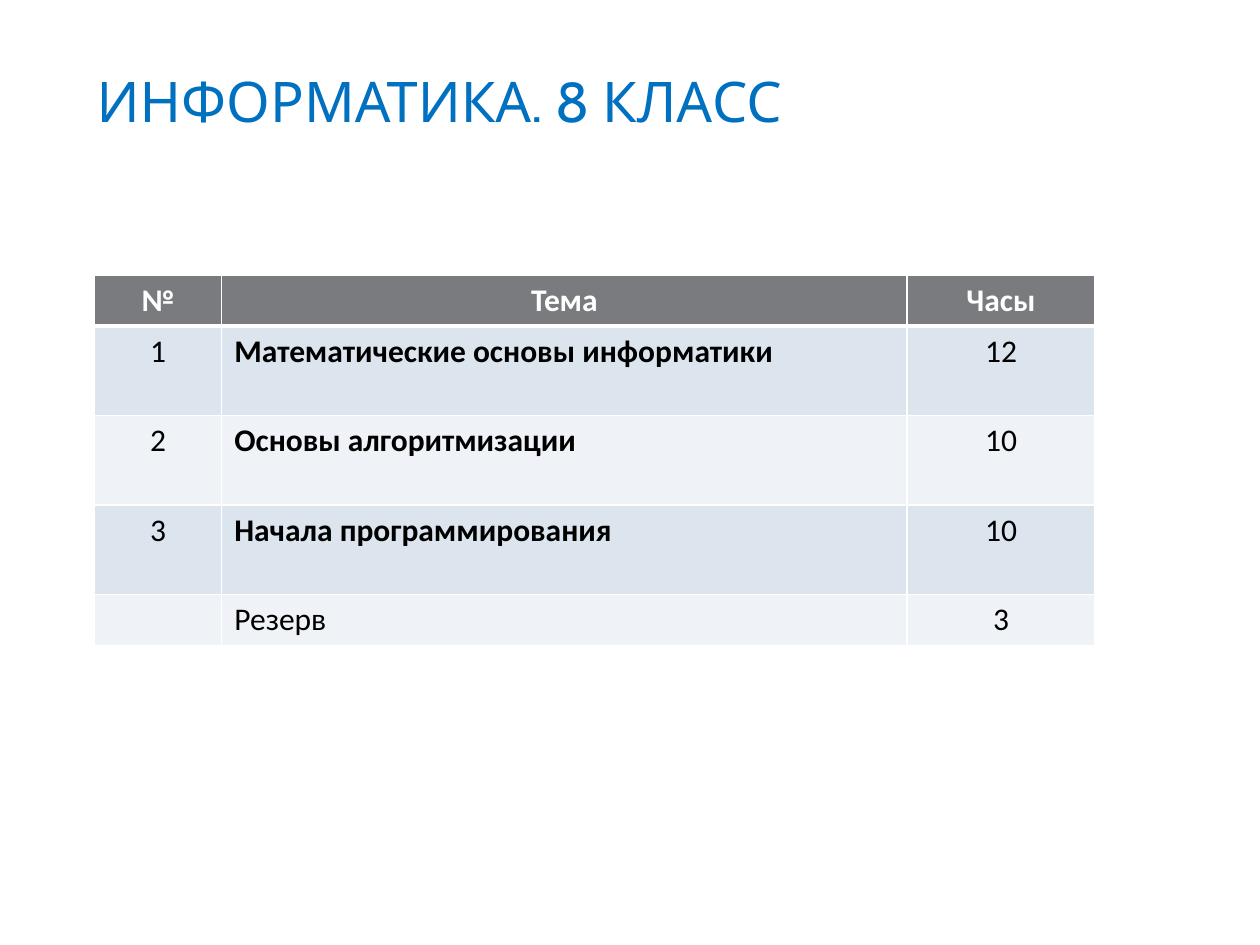
"""Build the slide with the grade 8 informatics topics and hours."""
import dataclasses

import lxml.etree
import pptx
import pptx.dml.color
import pptx.enum.text
import pptx.oxml.ns
import pptx.util

Pt = pptx.util.Pt
ALIGN = pptx.enum.text.PP_ALIGN
WHITE, BLACK, BLUE = "FFFFFF", "000000", "0070C0"
HEADER_FILL, BAND_FILLS = "797B7E", ("DCE5EE", "EFF3F7")
COLUMN_WIDTHS = (72.7, 391.7, 107.3)


@dataclasses.dataclass(frozen=True)
class TopicRow:
    number: str
    topic: str
    hours: str
    height: float
    bold_topic: bool = True


HEADER = TopicRow("№", "Тема", "Часы", 29.2)
TOPICS = (
    TopicRow("1", "Математические основы информатики", "12", 51.2),
    TopicRow("2", "Основы алгоритмизации", "10", 51.2),
    TopicRow("3", "Начала программирования", "10", 51.2),
    TopicRow("", "Резерв", "3", 29.2, bold_topic=False),
)


def color(value: str) -> pptx.dml.color.RGBColor:
    return pptx.dml.color.RGBColor.from_string(value)


def add_span(para, text: str, font: str, size: float, value: str, bold: bool) -> None:
    span = para.add_run()
    span.text = text
    span.font.name = font
    span.font.size = Pt(size)
    span.font.bold = bold
    span.font.color.rgb = color(value)


def set_borders(cell, top: float, bottom: float) -> None:
    properties = cell._tc.get_or_add_tcPr()
    for side, width in (("L", 1), ("R", 1), ("T", top), ("B", bottom)):
        line = lxml.etree.SubElement(
            properties, pptx.oxml.ns.qn(f"a:ln{side}"), w=str(Pt(width)))
        fill = lxml.etree.SubElement(line, pptx.oxml.ns.qn("a:solidFill"))
        lxml.etree.SubElement(fill, pptx.oxml.ns.qn("a:srgbClr"), val=WHITE)


def fill_row(table, index: int, row: TopicRow) -> None:
    is_header = index == 0
    table.rows[index].height = Pt(row.height)
    background = HEADER_FILL if is_header else BAND_FILLS[(index - 1) % 2]
    for column, text in enumerate((row.number, row.topic, row.hours)):
        is_topic = column == 1
        cell = table.cell(index, column)
        set_borders(cell, 3 if index == 1 else 1, 3 if is_header else 1)
        cell.fill.solid()
        cell.fill.fore_color.rgb = color(background)
        para = cell.text_frame.paragraphs[0]
        para.alignment = ALIGN.LEFT if is_topic and not is_header else ALIGN.CENTER
        if text:
            add_span(para, text, "Calibri", 18, WHITE if is_header else BLACK,
                     is_header or (is_topic and row.bold_topic))


def add_title(page, text: str) -> None:
    box = page.shapes.title
    box.left, box.top, box.width, box.height = Pt(48), Pt(18), Pt(642), Pt(78)
    box.text_frame.vertical_anchor = pptx.enum.text.MSO_ANCHOR.MIDDLE
    para = box.text_frame.paragraphs[0]
    para.alignment = ALIGN.LEFT
    add_span(para, text, "Cabin", 32, BLUE, False)


def add_topics(page) -> None:
    rows = (HEADER, *TOPICS)
    table = page.shapes.add_table(
        len(rows), len(COLUMN_WIDTHS), Pt(54), Pt(157),
        Pt(sum(COLUMN_WIDTHS)), Pt(sum(row.height for row in rows))).table
    for column, width in zip(table.columns, COLUMN_WIDTHS):
        column.width = Pt(width)
    for index, row in enumerate(rows):
        fill_row(table, index, row)


def main() -> None:
    deck = pptx.Presentation()
    deck.slide_width, deck.slide_height = Pt(720), Pt(540)
    page = deck.slides.add_slide(deck.slide_layouts[5])
    add_title(page, "ИНФОРМАТИКА. 8 КЛАСС")
    add_topics(page)
    deck.save("out.pptx")


if __name__ == "__main__":
    main()
